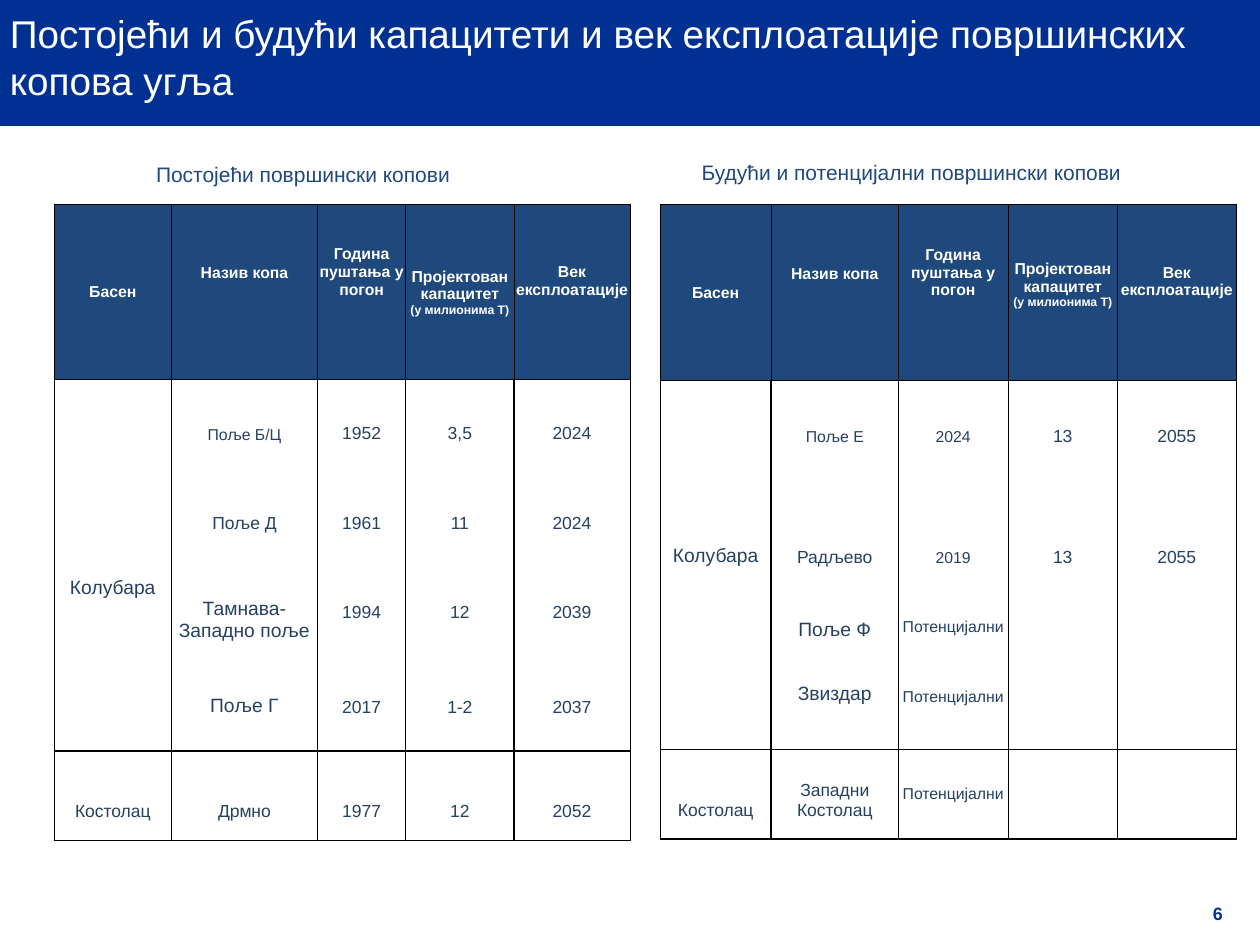
from lxml.etree import SubElement
from pptx import Presentation
from pptx.dml.color import RGBColor
from pptx.enum.shapes import MSO_SHAPE
from pptx.enum.text import MSO_ANCHOR, PP_ALIGN
from pptx.oxml.ns import qn
from pptx.util import Inches, Pt

COLORS = {
    "banner": "003192", "number": "003296", "white": "FFFFFF",
    "header": "1F497D", "body": "254061", "border": "000000",
}
FONT = "Arial"
WIDTH, HEIGHT = 10, 7.5
TABLE_TOP, TABLE_WIDTH = 1.62, 4.57
INSET, BOTTOM_GAP = 0.01, 0.15
EDGE_WIDTHS = (0.5, 1, 1, 0.5, 1, 0.5)
EMPTY_SIZE = 6

TITLE = "Постојећи и будући капацитети и век експлоатације површинских копова угља"
PAGE_NUMBER = "6"
CAPACITY = "Пројектован капацитет"
UNIT = "(у милионима T)"
POTENTIAL = "Потенцијални"

HEADERS = (
    (("Басен",), 0),
    (("Назив копа",), 0.3),
    (("Година пуштања у погон",), 0.32),
    ((CAPACITY, UNIT), 0),
    (("Век експлоатације",), 0.18),
)

# Each body cell is (text or texts, size, optional bottom gap, optional paragraph space).
TABLES = (
    {
        "caption": "Постојећи површински копови",
        "caption_box": (1.14, 1.23, 2.56, 0.3),
        "left": 0.43,
        "columns": (0.93, 1.16, 0.7, 0.86, 0.92),
        "rows": (1.39, 0.66, 0.71, 0.71, 0.3, 0.3, 0.27, 0.71),
        "capacity_gap": 0,
        "body": (
            (None, ("Поље Б/Ц", 9), ("1952", 10), ("3,5", 10), ("2024", 10)),
            (None, ("Поље Д", 10), ("1961", 10), ("11", 10), ("2024", 10)),
            (("Колубара", 11), ("Тамнава-Западно поље", 11, 0),
             ("1994", 10), ("12", 10), ("2039", 10)),
            (None,) * 5,
            (None, ("Поље Г", 11, 0), ("2017", 10, 0), ("1-2", 10, 0), ("2037", 10, 0)),
            (None,) * 5,
            (("Костолац", 10), ("Дрмно", 10), ("1977", 10), ("12", 10), ("2052", 10)),
        ),
    },
    {
        "caption": "Будући и потенцијални површински копови",
        "caption_box": (5.47, 1.22, 3.62, 0.3),
        "left": 5.24,
        "columns": (0.88, 1.01, 0.87, 0.87, 0.94),
        "rows": (1.4, 0.67, 0.96, 1.1, 0.2, 0.71),
        "capacity_gap": 0.13,
        "body": (
            (None, ("Поље Е", 9), ("2024", 9), ("13", 10), ("2055", 10)),
            (("Колубара", 11), ("Радљево", 10), ("2019", 9), ("13", 10), ("2055", 10)),
            (None, (("Поље Ф", "Звиздар"), 11, 0.16, 24.5),
             ((POTENTIAL, POTENTIAL), 9, 0.15, 30), None, None),
            (None,) * 5,
            (("Костолац", 10), ("Западни Костолац", 10), (POTENTIAL, 9, 0.29), None, None),
        ),
    },
)


def color(name):
    return RGBColor.from_string(COLORS[name])


def add_run(paragraph, text, size, color_name, bold=False):
    run = paragraph.add_run()
    run.text = text
    run.font.name = FONT
    run.font.size = Pt(size)
    run.font.bold = bold
    run.font.color.rgb = color(color_name)


def add_text(slide, box, text, size, color_name, anchor=MSO_ANCHOR.TOP,
             alignment=PP_ALIGN.LEFT, bold=False):
    frame = slide.shapes.add_textbox(*map(Inches, box)).text_frame
    frame.word_wrap = True
    frame.vertical_anchor = anchor
    frame.paragraphs[0].alignment = alignment
    add_run(frame.paragraphs[0], text, size, color_name, bold)


def fill_cell(cell, texts, sizes, color_name, gap, anchor, bold=False, space=0):
    cell.vertical_anchor = anchor
    cell.margin_bottom = Inches(gap)
    frame = cell.text_frame
    for index, (text, size) in enumerate(zip(texts, sizes)):
        paragraph = frame.add_paragraph() if index else frame.paragraphs[0]
        paragraph.alignment = PP_ALIGN.CENTER
        if index and space:
            paragraph.space_before = Pt(space)
        add_run(paragraph, text, size, color_name, bold)


def set_borders(cell, widths):
    properties = cell._tc.get_or_add_tcPr()
    for index, (side, width) in enumerate(zip(("L", "R", "T", "B"), widths)):
        line = properties.makeelement(qn(f"a:ln{side}"), {"w": str(Pt(width))})
        if width:
            fill = SubElement(line, qn("a:solidFill"))
            SubElement(fill, qn("a:srgbClr"), val=COLORS["border"])
        else:
            SubElement(line, qn("a:noFill"))
        properties.insert(index, line)


def border_widths(row, column, last):
    if row == 0:
        return (0.5,) * 4
    top = 0.5 if row == 1 else 1 if row == last else 0
    bottom = 1 if row >= last - 1 else 0
    return EDGE_WIDTHS[column], EDGE_WIDTHS[column + 1], top, bottom


def fill_header(cell, column, capacity_gap):
    texts, gap = HEADERS[column]
    gap = capacity_gap if texts[0] == CAPACITY else gap
    fill_cell(cell, texts, (9, 7), "white", gap, MSO_ANCHOR.MIDDLE, bold=True)


def fill_body(cell, content, anchor):
    if content is None:
        paragraph = cell.text_frame.paragraphs[0]
        SubElement(paragraph._p, qn("a:endParaRPr"), sz=str(EMPTY_SIZE * 100))
        return
    text, size, gap, space = (*content, *(BOTTOM_GAP, 0)[len(content) - 2:])
    texts = (text,) if isinstance(text, str) else text
    fill_cell(cell, texts, (size,) * len(texts), "body", gap, anchor, space=space)


def add_mine_table(slide, data):
    heights, widths = data["rows"], data["columns"]
    last = len(heights) - 1
    box = (data["left"], TABLE_TOP, TABLE_WIDTH, sum(heights))
    table = slide.shapes.add_table(len(heights), len(widths), *map(Inches, box)).table
    table.horz_banding = False
    for column, width in zip(table.columns, widths):
        column.width = Inches(width)
    for row_index, height in enumerate(heights):
        table.rows[row_index].height = Inches(height)
        for column_index in range(len(widths)):
            cell = table.cell(row_index, column_index)
            cell.margin_left = cell.margin_right = cell.margin_top = Inches(INSET)
            cell.margin_bottom = 0
            cell.fill.solid()
            cell.fill.fore_color.rgb = color("white" if row_index else "header")
            if row_index:
                content = data["body"][row_index - 1][column_index]
                middle = column_index == 0 and row_index == 3
                fill_body(cell, content, MSO_ANCHOR.MIDDLE if middle else MSO_ANCHOR.BOTTOM)
            else:
                fill_header(cell, column_index, data["capacity_gap"])
            set_borders(cell, border_widths(row_index, column_index, last))


def main():
    presentation = Presentation()
    presentation.slide_width = Inches(WIDTH)
    presentation.slide_height = Inches(HEIGHT)
    slide = presentation.slides.add_slide(presentation.slide_layouts[6])

    banner = slide.shapes.add_shape(MSO_SHAPE.RECTANGLE, 0, 0, Inches(WIDTH), Inches(1))
    banner.shadow.inherit = False
    banner.fill.solid()
    banner.fill.fore_color.rgb = color("banner")
    banner.line.fill.background()

    add_text(slide, (9.41, 7.05, 0.51, 0.4), PAGE_NUMBER, 10.2, "number",
             MSO_ANCHOR.MIDDLE, PP_ALIGN.CENTER, bold=True)
    add_text(slide, (-0.02, 0.05, 9.82, 0.8), TITLE, 22.1, "white", MSO_ANCHOR.MIDDLE)
    for data in TABLES:
        add_mine_table(slide, data)
        add_text(slide, data["caption_box"], data["caption"], 12, "header")
    presentation.save("out.pptx")


if __name__ == "__main__":
    main()
